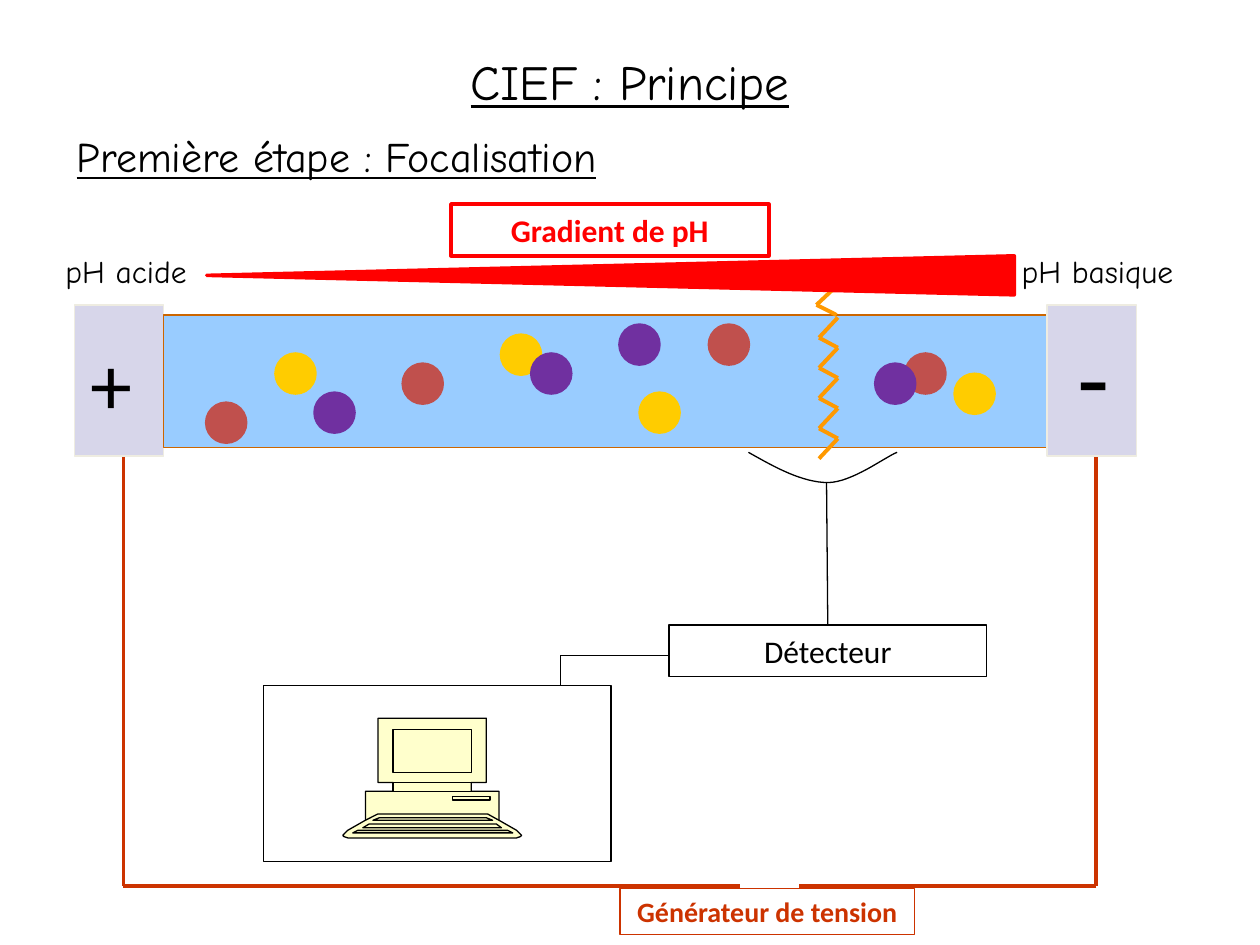
from pptx import Presentation
from pptx.dml.color import RGBColor
from pptx.enum.shapes import MSO_CONNECTOR, MSO_SHAPE
from pptx.enum.text import MSO_ANCHOR, MSO_AUTO_SIZE, PP_ALIGN
from pptx.oxml.ns import qn
from pptx.util import Inches, Pt
from lxml import etree

RECT, OVAL, TRIANGLE = MSO_SHAPE.RECTANGLE, MSO_SHAPE.OVAL, MSO_SHAPE.ISOSCELES_TRIANGLE
STRAIGHT = MSO_CONNECTOR.STRAIGHT
LEFT, CENTER = PP_ALIGN.LEFT, PP_ALIGN.CENTER
MIDDLE, TOP = MSO_ANCHOR.MIDDLE, MSO_ANCHOR.TOP
FIT = MSO_AUTO_SIZE.SHAPE_TO_FIT_TEXT

BLACK = RGBColor(0x00, 0x00, 0x00)
RED = RGBColor(0xFF, 0x00, 0x00)
RUST = RGBColor(0xCC, 0x33, 0x00)
BROWN = RGBColor(0xCC, 0x66, 0x00)
LILAC = RGBColor(0xD7, 0xD6, 0xEA)
IVORY = RGBColor(0xEE, 0xEC, 0xE1)
SKY = RGBColor(0x99, 0xCC, 0xFF)
CREAM = RGBColor(0xFF, 0xFF, 0xCC)
ORANGE = RGBColor(0xFF, 0x99, 0x00)
BRICK = RGBColor(0xC0, 0x50, 0x4D)
YELLOW = RGBColor(0xFF, 0xCC, 0x00)
PURPLE = RGBColor(0x70, 0x30, 0xA0)

BODY, HAND = "Calibri", "Comic Neue"
DOT = 0.31
DOTS = {
    BRICK: [(1.64, 3.2), (3.2, 2.89), (5.63, 2.58), (7.19, 2.81)],
    YELLOW: [(3.98, 2.66), (2.19, 2.81), (5.08, 3.12), (7.58, 2.97)],
    PURPLE: [(4.92, 2.58), (4.22, 2.81), (2.5, 3.12), (6.95, 2.89)],
}

# Right half of the computer outline; the left half mirrors it
COMPUTER_AXIS = 3.43
COMPUTER_HALF = [
    (3.86, 5.7), (3.86, 6.21), (3.74, 6.21), (3.74, 6.28), (3.96, 6.28),
    (3.96, 6.51), (4.1, 6.59), (4.14, 6.63), (4.13, 6.64), (4.1, 6.65),
]
COMPUTER_DETAILS = [
    [(3.12, 5.79), (3.74, 5.79), (3.74, 6.13), (3.12, 6.13)],
    [(3.12, 6.21), (3.74, 6.21), (3.74, 6.28), (3.12, 6.28)],
    [(3.59, 6.32), (3.89, 6.32), (3.89, 6.35), (3.59, 6.35)],
    [(2.96, 6.51), (3.01, 6.49), (3.86, 6.49), (3.91, 6.51)],
    [(2.88, 6.57), (2.93, 6.54), (3.94, 6.54), (3.98, 6.57)],
    [(2.8, 6.61), (2.84, 6.59), (4.03, 6.59), (4.07, 6.61)],
]
KEYBOARD_BACK = [(2.9, 6.51), (3, 6.46), (3.87, 6.46), (3.96, 6.51)]


def paint(sp, fill, color, width):
    sp.shadow.inherit = False
    if fill is None:
        sp.fill.background()
    else:
        sp.fill.solid()
        sp.fill.fore_color.rgb = fill
    sp.line.color.rgb = color
    sp.line.width = Pt(width)


def add_box(s, kind, box, fill, color, width=0.75):
    sp = s.shapes.add_shape(kind, *map(Inches, box))
    paint(sp, fill, color, width)
    return sp


def add_line(s, start, end, color=BLACK, width=0.75):
    line = s.shapes.add_connector(STRAIGHT, *map(Inches, start + end))
    line.line.color.rgb = color
    line.line.width = Pt(width)
    etree.SubElement(line._element.spPr, qn("a:effectLst"))


def add_outline(s, points, fill=None, close=True):
    start, *rest = [(Inches(x), Inches(y)) for x, y in points]
    builder = s.shapes.build_freeform(*start)
    builder.add_line_segments(rest, close=close)
    paint(builder.convert_to_shape(), fill, BLACK, 0.75)


def write(sp, text, size, font=BODY, color=BLACK, align=CENTER, anchor=TOP,
          wrap=False, **extra):
    tf = sp.text_frame
    for name, value in {"word_wrap": wrap, "auto_size": FIT,
                        "vertical_anchor": anchor}.items():
        setattr(tf, name, value)
    p = tf.paragraphs[0]
    p.alignment = align
    r = p.add_run()
    r.text = text
    r.font.color.rgb = color
    for name, value in {"name": font, "size": Pt(size), **extra}.items():
        setattr(r.font, name, value)


def add_text(s, box, text, size, **options):
    write(s.shapes.add_textbox(*map(Inches, box)), text, size, **options)


def add_label(s, box, text, size, color, width=0.75, **options):
    sp = add_box(s, RECT, box, None, color, width)
    write(sp, text, size, color=color, anchor=MIDDLE, wrap=True, **options)


def add_computer(s):
    mirrored = [(2 * COMPUTER_AXIS - x, y) for x, y in reversed(COMPUTER_HALF)]
    add_outline(s, COMPUTER_HALF + mirrored, CREAM)
    for points in COMPUTER_DETAILS:
        add_outline(s, points)
    add_outline(s, KEYBOARD_BACK, close=False)


def add_light_beam(s):
    def stroke(start, end):
        add_line(s, start, end, ORANGE, 2.25)

    stroke((6.64, 2.27), (6.48, 2.42))
    stroke((6.48, 2.42), (6.64, 2.5))
    count, step, drop = 5, 0.24, 0.16
    for i in range(count):
        y = 2.52 + i * step
        stroke((6.65, y), (6.5, y + drop))
        if i < count - 1:
            stroke((6.5, y + drop), (6.65, y + step))


def bezier(a, b, c, d, steps=16):
    for i in range(1, steps + 1):
        t = i / steps
        u = 1 - t
        yield tuple(u**3 * p0 + 3 * u * u * t * p1 + 3 * u * t * t * p2 + t**3 * p3
                    for p0, p1, p2, p3 in zip(a, b, c, d))


def add_collector(s):
    start, bottom, end = (5.94, 3.59), (6.57, 3.83), (7.12, 3.59)
    add_outline(s, [start,
                    *bezier(start, (6.15, 3.71), (6.37, 3.83), bottom),
                    *bezier(bottom, (6.76, 3.83), (7.02, 3.63), end)], close=False)
    add_line(s, (6.56, 3.83), (6.57, 4.96))


def add_circuit(s):
    left, right, top, bottom = 0.98, 8.7, 3.63, 7.03
    for x, gap in ((left, 5.87), (right, 6.34)):
        add_line(s, (x, top), (x, bottom), RUST, 2.25)
        add_line(s, (x, bottom), (gap, bottom), RUST, 2.25)
    add_text(s, (0.62, 2.58, 0.54, 0.91), "+", 48, align=LEFT)
    add_text(s, (8.45, 2.42, 0.46, 1.11), "-", 60, align=LEFT)


def main():
    prs = Presentation()
    prs.slide_width, prs.slide_height = Inches(10), Inches(7.5)
    s = prs.slides.add_slide(prs.slide_layouts[6])

    # Capillary between its two reservoirs
    add_box(s, RECT, (0.59, 2.42, 0.71, 1.2), LILAC, IVORY)
    add_box(s, RECT, (1.3, 2.5, 7.64, 1.05), SKY, BROWN)
    add_box(s, RECT, (8.31, 2.42, 0.71, 1.2), LILAC, IVORY)

    # Generator, detector and computer
    add_label(s, (4.92, 7.05, 2.34, 0.37), "Générateur de tension", 16, RUST, bold=True)
    add_label(s, (5.31, 4.96, 2.52, 0.41), "Détecteur", 18, BLACK)
    add_computer(s)
    add_box(s, RECT, (2.09, 5.44, 2.76, 1.4), None, BLACK)
    add_line(s, (5.31, 5.2), (4.45, 5.2))
    add_line(s, (4.45, 5.2), (4.45, 5.44))

    # Titles
    add_text(s, (3.53, 0.36, 2.94, 0.57), "CIEF : Principe", 28, font=HAND, underline=True)
    add_text(s, (0.51, 0.99, 4.74, 0.5), "Première étape : Focalisation", 24,
             font=HAND, align=LEFT, underline=True)

    # Analytes and detection
    for color, places in DOTS.items():
        for x, y in places:
            add_box(s, OVAL, (x, y, DOT, DOT), color, color, 2)
    add_light_beam(s)
    add_collector(s)

    # pH gradient
    wedge = add_box(s, TRIANGLE, (4.69, -1.02, 0.31, 6.41), RED, RED, 2)
    wedge.rotation = 270
    add_label(s, (3.58, 1.62, 2.52, 0.41), "Gradient de pH", 18, RED, 2.25, bold=True)
    add_text(s, (0.39, 1.95, 1.22, 0.4), "pH acide", 18, font=HAND)
    add_text(s, (7.97, 1.95, 1.48, 0.4), "pH basique", 18, font=HAND)

    add_circuit(s)
    prs.save("out.pptx")


if __name__ == "__main__":
    main()
